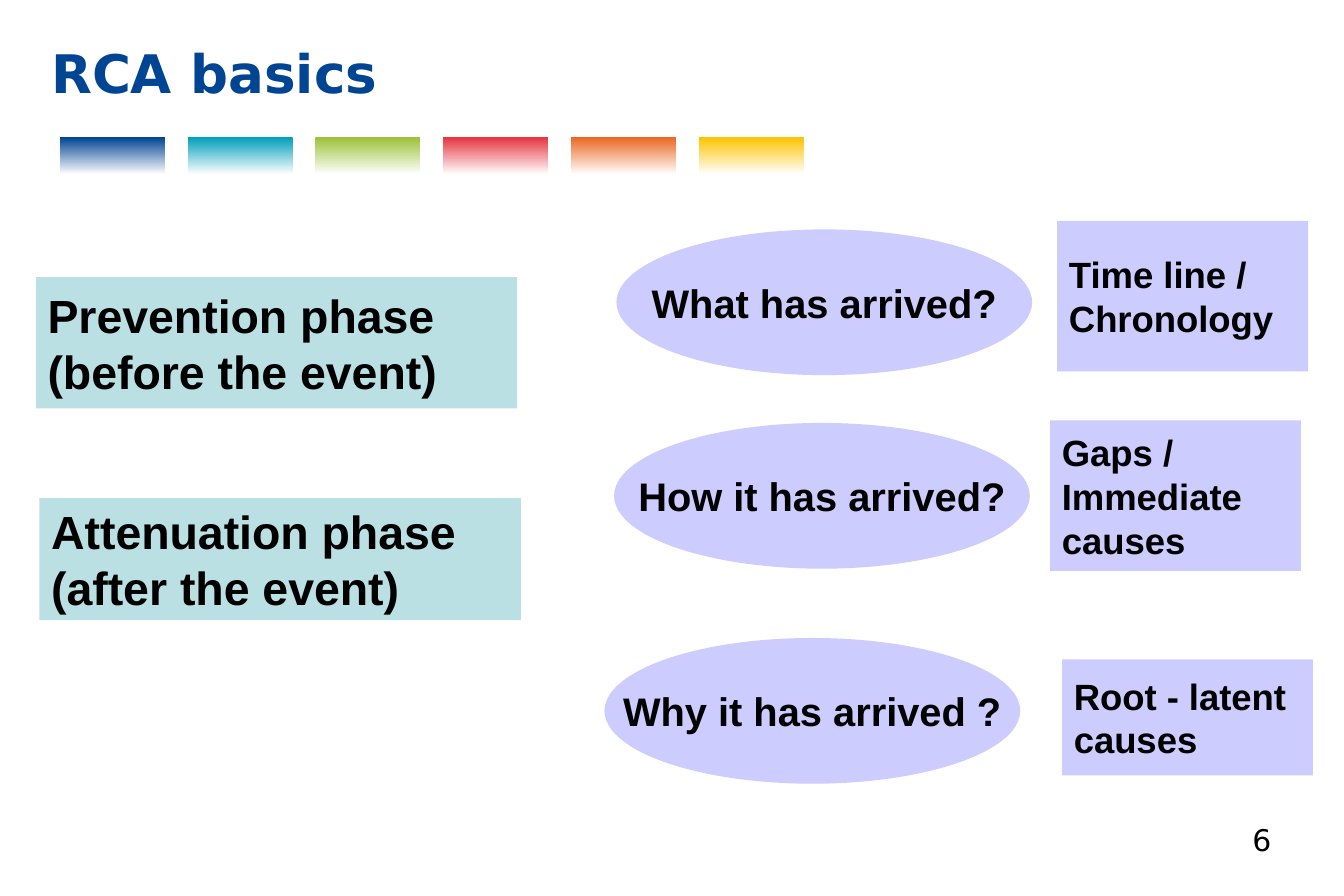
from dataclasses import dataclass

from pptx import Presentation
from pptx.dml.color import RGBColor
from pptx.enum.shapes import MSO_SHAPE
from pptx.enum.text import MSO_ANCHOR, PP_ALIGN
from pptx.slide import Slide
from pptx.text.text import TextFrame
from pptx.util import Inches, Pt

COLORS = {
    "navy": "004494",
    "teal": "009FBB",
    "green": "9CC239",
    "red": "E53540",
    "orange": "EA6721",
    "yellow": "FDC300",
    "white": "FFFFFF",
    "black": "000000",
    "phase": "BBE0E3",
    "lilac": "CCCCFF",
}
STRIPE = ["navy", "teal", "green", "red", "orange", "yellow"]


@dataclass
class Style:
    shape: MSO_SHAPE
    fill: str
    size: int
    align: PP_ALIGN


@dataclass
class Panel:
    style: Style
    lines: list[str]
    left: float
    top: float
    width: float
    height: float


PHASE = Style(MSO_SHAPE.RECTANGLE, "phase", 28, PP_ALIGN.LEFT)
QUESTION = Style(MSO_SHAPE.OVAL, "lilac", 24, PP_ALIGN.CENTER)
ANSWER = Style(MSO_SHAPE.RECTANGLE, "lilac", 22, PP_ALIGN.LEFT)

PANELS = [
    Panel(PHASE, ["Prevention phase", "(before the event)"], 0.3, 2.32, 4.03, 1.1),
    Panel(PHASE, ["Attenuation phase", "(after the event)"], 0.33, 4.17, 4.03, 1.02),
    Panel(QUESTION, ["What has arrived?"], 5.16, 1.92, 3.48, 1.22),
    Panel(QUESTION, ["How it has arrived?"], 5.14, 3.54, 3.48, 1.22),
    Panel(QUESTION, ["Why it has arrived ?"], 5.06, 5.34, 3.48, 1.22),
    Panel(ANSWER, ["Time line /", "Chronology"], 8.85, 1.85, 2.1, 1.26),
    Panel(ANSWER, ["Gaps /", "Immediate", "causes"], 8.79, 3.52, 2.1, 1.26),
    Panel(ANSWER, ["Root - latent", "causes"], 8.89, 5.52, 2.1, 0.97),
]


def rgb(name: str) -> RGBColor:
    return RGBColor.from_string(COLORS[name])


def write(frame: TextFrame, lines: list[str], size: int, align: PP_ALIGN,
          font: str = "Arial", bold: bool = True, color: str = "black") -> None:
    frame.text = "\n".join(lines)
    for paragraph in frame.paragraphs:
        paragraph.alignment = align
        paragraph.font.name = font
        paragraph.font.size = Pt(size)
        paragraph.font.bold = bold
        paragraph.font.color.rgb = rgb(color)


def draw_stripe(slide: Slide) -> None:
    for index, color in enumerate(STRIPE):
        block = slide.shapes.add_shape(
            MSO_SHAPE.RECTANGLE, Inches(0.5 + 1.07 * index), Inches(1.15),
            Inches(0.88), Inches(0.31))
        block.shadow.inherit = False
        block.line.fill.background()
        block.fill.gradient()
        block.fill.gradient_angle = 270
        for stop, name, position in zip(block.fill.gradient_stops, (color, "white"), (0, 1)):
            stop.color.rgb = rgb(name)
            stop.position = position


def draw_panel(slide: Slide, panel: Panel) -> None:
    style = panel.style
    box = slide.shapes.add_shape(
        style.shape, Inches(panel.left), Inches(panel.top),
        Inches(panel.width), Inches(panel.height))
    box.shadow.inherit = False
    box.fill.solid()
    box.fill.fore_color.rgb = rgb(style.fill)
    box.line.fill.background()
    box.text_frame.word_wrap = False
    box.text_frame.vertical_anchor = MSO_ANCHOR.MIDDLE
    write(box.text_frame, panel.lines, style.size, style.align)


def add_label(slide: Slide, left: float, top: float, width: float, height: float) -> TextFrame:
    frame = slide.shapes.add_textbox(
        Inches(left), Inches(top), Inches(width), Inches(height)).text_frame
    frame.word_wrap = True
    return frame


def main() -> None:
    deck = Presentation()
    deck.slide_width = Inches(11.25)
    deck.slide_height = Inches(7.5)
    slide = deck.slides.add_slide(deck.slide_layouts[6])

    # Title and colour stripe
    draw_stripe(slide)
    title = add_label(slide, 0.33, 0.13, 10.12, 0.95)
    title.vertical_anchor = MSO_ANCHOR.MIDDLE
    write(title, ["RCA basics"], 32, PP_ALIGN.LEFT, "DejaVu Sans", color="navy")

    # Phases, questions and answers
    for panel in PANELS:
        draw_panel(slide, panel)

    # Page number
    page_number = add_label(slide, 8.59, 6.83, 2.15, 0.5)
    write(page_number, ["6"], 18, PP_ALIGN.RIGHT, "DejaVu Sans", bold=False)

    deck.save("out.pptx")


if __name__ == "__main__":
    main()
